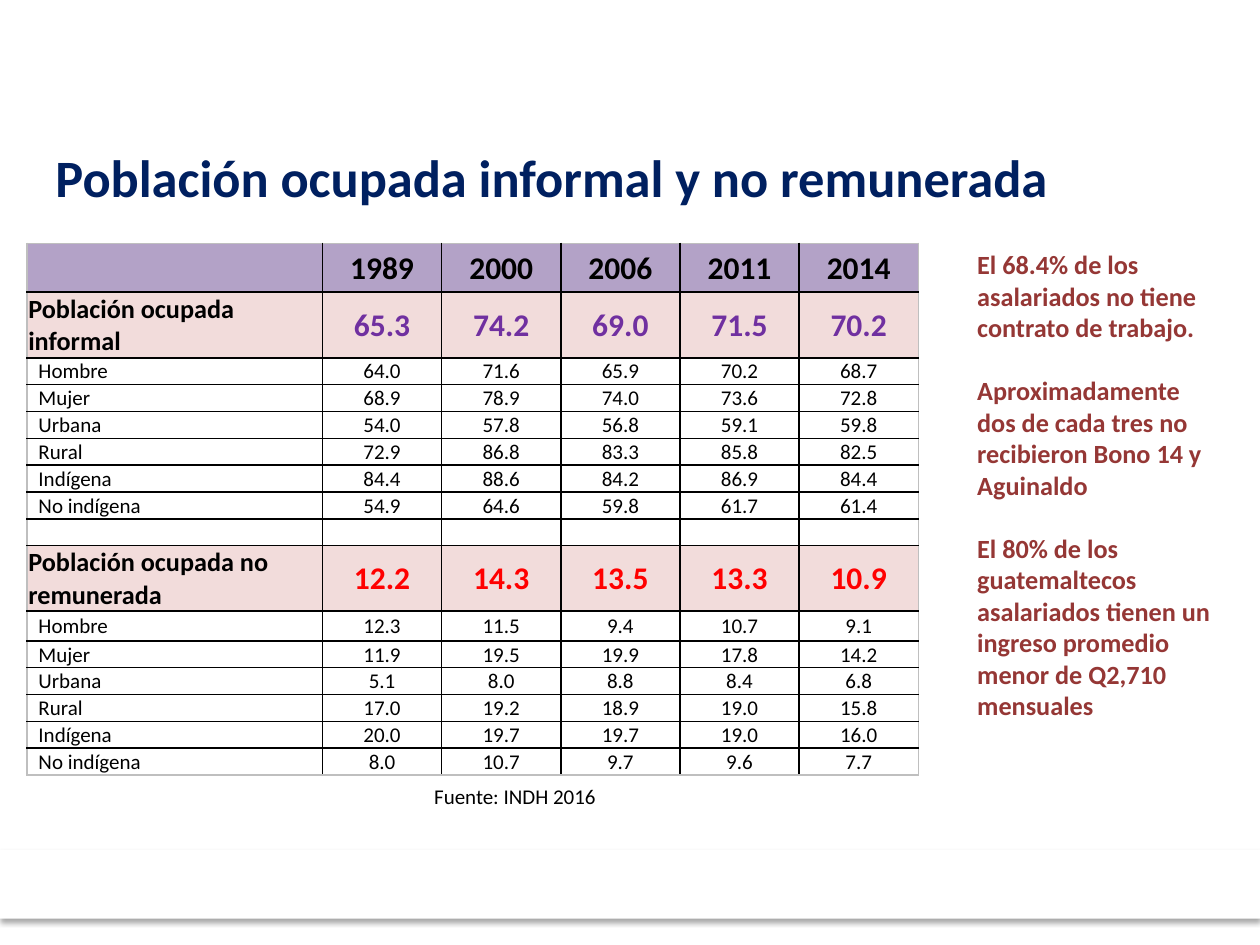
from dataclasses import dataclass
from lxml import etree
from pptx import Presentation
from pptx.dml.color import RGBColor
from pptx.enum import shapes, text
from pptx.oxml import ns
from pptx.util import Pt


@dataclass(frozen=True)
class Theme:
    face: str = "Calibri"
    navy: str = "002060"
    black: str = "000000"
    white: str = "FFFFFF"
    gray: str = "BFBFBF"
    lilac: str = "B3A2C7"
    rose: str = "F2DCDB"
    purple: str = "7030A0"
    red: str = "FF0000"
    brick: str = "953735"
    title: float = 30
    head: float = 18
    note: float = 15
    small: float = 12


def add(node, tag, **attrs):
    return etree.SubElement(node, ns.qn(tag), {k: str(v) for k, v in attrs.items()})


def write(frame, *lines, face, size, color, bold=False,
          align=text.PP_ALIGN.LEFT, gap=0):
    for i, line in enumerate(lines):
        para = frame.paragraphs[0] if i == 0 else frame.add_paragraph()
        para.alignment = align
        para.space_before = Pt(gap if i else 0)
        if not line:
            add(para._p, "a:endParaRPr", sz=int(size * 100))
            continue
        run = para.add_run()
        run.text = line
        font = run.font
        font.name, font.size, font.bold = face, Pt(size), bold
        font.color.rgb = RGBColor.from_string(color)


class Deck:
    def __init__(self, theme):
        self.theme = theme
        self.prs = Presentation()
        self.prs.slide_width, self.prs.slide_height = Pt(720), Pt(540)
        self.slide = self.prs.slides.add_slide(self.prs.slide_layouts[5])

    def title(self, line, box):
        shape = self.slide.shapes.title
        shape.left, shape.top, shape.width, shape.height = map(Pt, box)
        frame = shape.text_frame
        frame.vertical_anchor = text.MSO_ANCHOR.MIDDLE
        frame.auto_size = text.MSO_AUTO_SIZE.NONE
        write(frame, line, face=self.theme.face, size=self.theme.title,
              color=self.theme.navy, bold=True)

    def band(self, box):
        shape = self.slide.shapes.add_shape(
            shapes.MSO_SHAPE.RECTANGLE, *map(Pt, box))
        shape.fill.solid()
        shape.fill.fore_color.rgb = RGBColor.from_string(self.theme.white)
        shape.line.fill.background()
        shape.shadow.inherit = False
        glow = add(shape._element.spPr.find(ns.qn("a:effectLst")), "a:outerShdw",
                   blurRad=Pt(3.1), dist=Pt(1.8), dir=5400000, rotWithShape=0)
        add(add(glow, "a:srgbClr", val=self.theme.black), "a:alpha", val=35000)

    def label(self, *lines, box, **style):
        frame = self.slide.shapes.add_textbox(*map(Pt, box)).text_frame
        frame.word_wrap = True
        write(frame, *lines, face=self.theme.face, **style)

    def table(self, rows, spot, widths, heights):
        grid = self.slide.shapes.add_table(
            len(rows), len(widths), *map(Pt, spot), Pt(sum(widths)),
            Pt(sum(heights))).table
        grid.first_row = grid.horz_banding = False
        for col, width in zip(grid.columns, widths):
            col.width = Pt(width)
        for row, height in zip(grid.rows, heights):
            row.height = Pt(height)
        for r, (cells, look) in enumerate(rows):
            for c, word in enumerate(cells):
                edges = {"L": c == 0, "R": c == len(widths) - 1,
                         "T": r == 0, "B": r == len(rows) - 1}
                self.cell(grid.cell(r, c), word, c == 0, edges, **look)

    def cell(self, cell, word, first, edges, fill=None, label=None,
             indent=0.7, size=None, color=None, bold=False):
        theme = self.theme
        cell.margin_left = Pt(indent if first else 0.7)
        cell.margin_right = cell.margin_top = Pt(0.7)
        cell.margin_bottom = 0
        cell.vertical_anchor = text.MSO_ANCHOR.MIDDLE
        for side, outer in edges.items():
            line = add(cell._tc.get_or_add_tcPr(), f"a:ln{side}", w=Pt(1))
            add(add(line, "a:solidFill"), "a:srgbClr",
                val=theme.gray if outer else theme.black)
        if fill:
            cell.fill.solid()
            cell.fill.fore_color.rgb = RGBColor.from_string(fill)
        else:
            cell.fill.background()
        write(cell.text_frame, word, face=theme.face, bold=bold,
              size=label if first and label else size,
              color=theme.black if first else color,
              align=text.PP_ALIGN.LEFT if first else text.PP_ALIGN.CENTER)


YEARS = ["", "1989", "2000", "2006", "2011", "2014"]
GROUPS = ["Hombre", "Mujer", "Urbana", "Rural", "Indígena", "No indígena"]
CASUAL = """65.3 74.2 69.0 71.5 70.2
64.0 71.6 65.9 70.2 68.7
68.9 78.9 74.0 73.6 72.8
54.0 57.8 56.8 59.1 59.8
72.9 86.8 83.3 85.8 82.5
84.4 88.6 84.2 86.9 84.4
54.9 64.6 59.8 61.7 61.4"""
UNPAID = """12.2 14.3 13.5 13.3 10.9
12.3 11.5 9.4 10.7 9.1
11.9 19.5 19.9 17.8 14.2
5.1 8.0 8.8 8.4 6.8
17.0 19.2 18.9 19.0 15.8
20.0 19.7 19.7 19.0 16.0
8.0 10.7 9.7 9.6 7.7"""


def block(name, data, color, theme):
    total = dict(fill=theme.rose, label=theme.note, size=theme.head,
                 color=color, bold=True)
    plain = dict(indent=6.5, size=theme.small, color=theme.black)
    return [([word, *line.split()], plain if i else total)
            for i, (word, line) in enumerate(zip([name, *GROUPS], data.splitlines()))]


def main():
    theme = Theme()
    deck = Deck(theme)
    deck.band((0, 485.5, 720, 39.5))
    deck.title("Población ocupada informal y no remunerada", (24.5, 83, 620.5, 36))
    head = dict(fill=theme.lilac, size=theme.head, color=theme.black, bold=True)
    blank = dict(size=theme.small, color=theme.black)
    rows = [(YEARS, head),
            *block("Población ocupada informal", CASUAL, theme.purple, theme),
            ([""] * len(YEARS), blank),
            *block("Población ocupada no remunerada", UNPAID, theme.red, theme)]
    row = 15.2
    deck.table(rows, (15.5, 139), [168.8] + [68.1] * 5,
               [28, 37] + [row] * 7 + [37, 17] + [row] * 5)
    deck.label("Fuente: INDH 2016", box=(241, 444, 132, 22),
               size=theme.small, color=theme.black)
    deck.label("El 68.4% de los asalariados no tiene contrato de trabajo.",
               "Aproximadamente dos de cada tres no recibieron Bono 14 y Aguinaldo",
               "El 80% de los guatemaltecos asalariados tienen un ingreso promedio "
               "menor de Q2,710 mensuales",
               box=(551.3, 138.5, 153.5, 280), size=theme.note,
               color=theme.brick, bold=True, gap=18)
    deck.prs.save("out.pptx")


if __name__ == "__main__":
    main()
